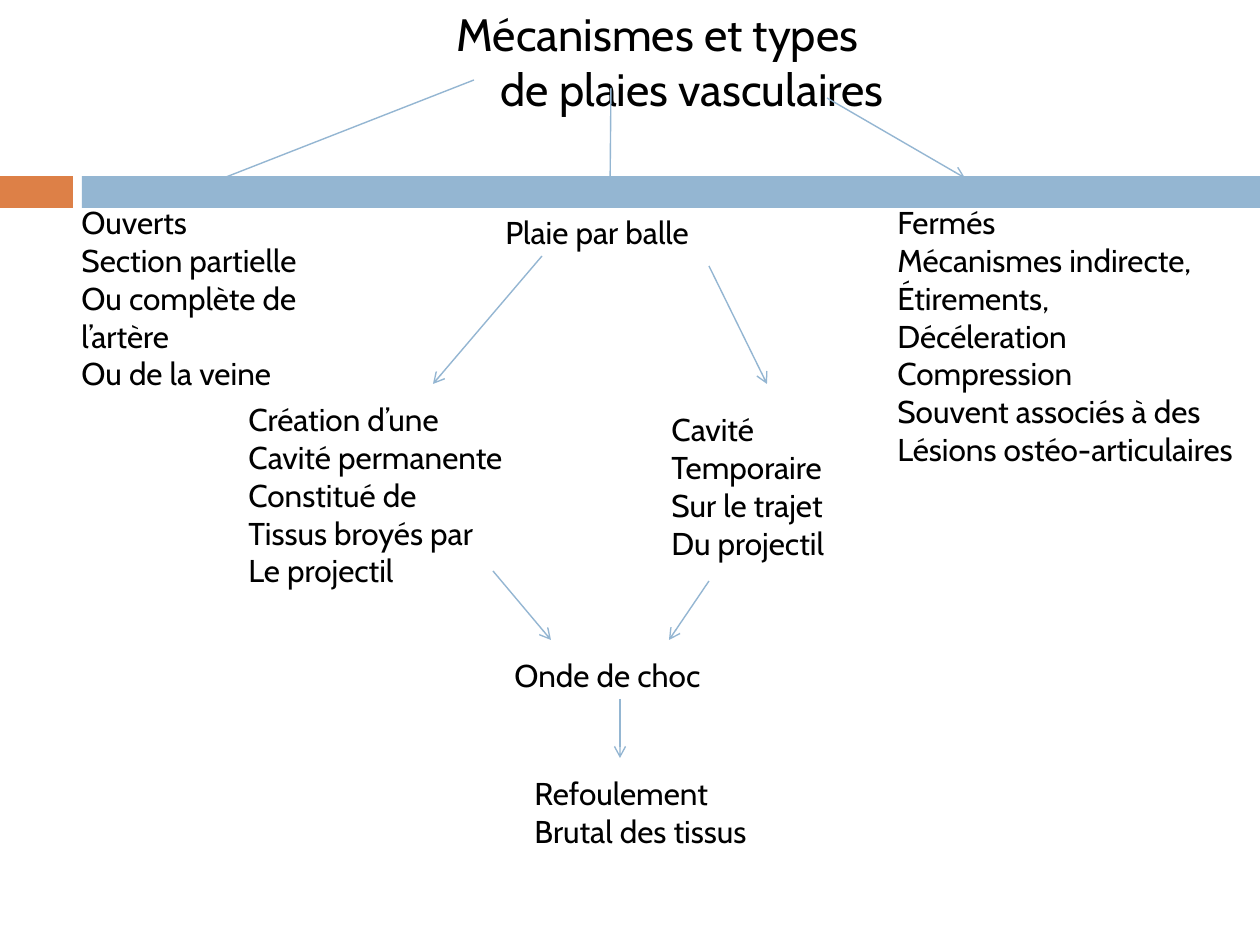
import pptx
import pptx.dml.color
import pptx.enum.shapes
import pptx.enum.text
import pptx.oxml
import pptx.oxml.ns
import pptx.util

EMU_PER_PX = 914400 / 126
FONT = "Cabin"
BLACK, BLUE, ORANGE = "000000", "94B6D2", "DD8047"

BARS = [((0, 176, 73, 32), ORANGE), ((82, 176, 1178, 32), BLUE)]

NOTES = [
    ((69, 197, 331, 165),
     ["Ouverts", "Section partielle", "Ou complète de l’artère", "Ou de la veine"]),
    ((493, 207, 227, 50), ["Plaie par balle"]),
    ((885, 197, 386, 280),
     ["Fermés", "Mécanismes indirecte,", "Étirements,", "Décéleration",
      "Compression", "Souvent associés à des", "Lésions ostéo-articulaires"]),
    ((236, 394, 294, 204),
     ["Création d’une", "Cavité permanente", "Constitué de",
      "Tissus broyés par", "Le projectil"]),
    ((659, 404, 188, 165),
     ["Cavité", "Temporaire", "Sur le trajet", "Du projectil"]),
    ((502, 650, 223, 50), ["Onde de choc"]),
    ((522, 768, 258, 89), ["Refoulement", "Brutal des tissus"]),
]

ARROWS = [
    ((474, 80), (198, 188)),
    ((611, 88), (610, 197)),
    ((827, 98), (965, 178)),
    ((542, 256), (433, 384)),
    ((709, 266), (767, 384)),
    ((493, 571), (551, 640)),
    ((709, 581), (669, 640)),
    ((620, 699), (620, 758)),
]


def px(length):
    """Turn pixels into EMU."""
    return pptx.util.Emu(round(length * EMU_PER_PX))


def rgb(color):
    """Turn a hex string into a colour."""
    return pptx.dml.color.RGBColor.from_string(color)


def set_font(paragraph, size):
    """Give a paragraph the slide's typeface in black."""
    paragraph.font.name = FONT
    paragraph.font.size = pptx.util.Pt(size)
    paragraph.font.color.rgb = rgb(BLACK)


def add_title(slide, box, text):
    """Place the title with a hanging indent."""
    title = slide.shapes.title
    title.left, title.top, title.width, title.height = map(px, box)
    frame = title.text_frame
    frame.text = text
    frame.word_wrap = True
    frame.auto_size = pptx.enum.text.MSO_AUTO_SIZE.NONE
    frame.vertical_anchor = pptx.enum.text.MSO_ANCHOR.TOP
    paragraph = frame.paragraphs[0]
    paragraph.alignment = pptx.enum.text.PP_ALIGN.LEFT
    properties = paragraph._p.get_or_add_pPr()
    properties.set("marL", str(px(44)))
    properties.set("indent", str(-px(44)))
    set_font(paragraph, 25.9)


def add_bar(slide, box, color):
    """Draw one part of the divider."""
    bar = slide.shapes.add_shape(
        pptx.enum.shapes.MSO_SHAPE.RECTANGLE, *map(px, box))
    bar.shadow.inherit = False
    bar.fill.solid()
    bar.fill.fore_color.rgb = rgb(color)
    bar.line.fill.background()


def add_note(slide, box, lines):
    """Write one block of the diagram, a paragraph per line."""
    frame = slide.shapes.add_textbox(*map(px, box)).text_frame
    frame.word_wrap = True
    frame.text = "\n".join(lines)
    for paragraph in frame.paragraphs:
        set_font(paragraph, 18)


def add_arrow(slide, start, end):
    """Draw a thin arrow from start to end."""
    arrow = slide.shapes.add_connector(
        pptx.enum.shapes.MSO_CONNECTOR.STRAIGHT, *map(px, start + end))
    arrow.line.color.rgb = rgb(BLUE)
    arrow.line.width = pptx.util.Pt(0.79)
    head = pptx.oxml.parse_xml(
        f'<a:tailEnd {pptx.oxml.ns.nsdecls("a")} type="arrow"/>')
    arrow.line._get_or_add_ln().append(head)
    arrow._element.spPr.append(
        pptx.oxml.parse_xml(f'<a:effectLst {pptx.oxml.ns.nsdecls("a")}/>'))


def main():
    """Build the slide on vascular wounds."""
    deck = pptx.Presentation()
    deck.slide_width, deck.slide_height = px(1260), px(945)
    slide = deck.slides.add_slide(deck.slide_layouts[5])
    add_title(slide, (444, 0, 472, 108),
              "Mécanismes et types de plaies vasculaires")
    for box, color in BARS:
        add_bar(slide, box, color)
    for box, lines in NOTES:
        add_note(slide, box, lines)
    for start, end in ARROWS:
        add_arrow(slide, start, end)
    deck.save("out.pptx")


if __name__ == "__main__":
    main()
